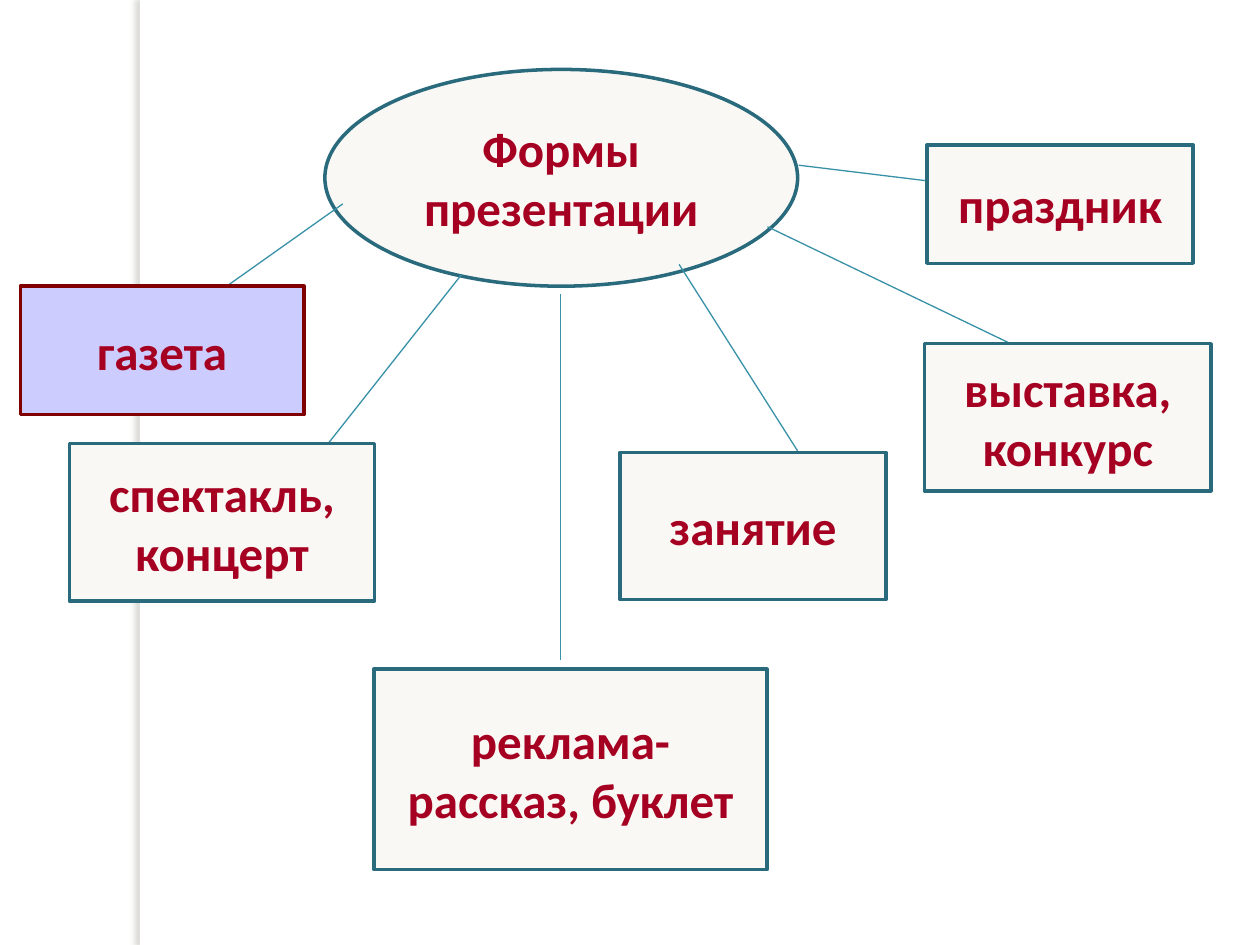
from lxml.etree import SubElement
from pptx import Presentation
from pptx.dml.color import RGBColor
from pptx.enum.shapes import MSO_CONNECTOR, MSO_SHAPE as Shape
from pptx.enum.text import MSO_ANCHOR, PP_ALIGN
from pptx.oxml.ns import qn
from pptx.util import Cm, Pt

COLORS = {
    "band": "FFFFFF", "shadow": "736F63", "cream": "FAF8F4", "teal": "296B7C",
    "ray": "3891A7", "lilac": "CCCCFF", "maroon": "800000", "text": "A50021",
}
FONT = {"name": "Calibri", "size": Pt(28), "bold": True}


def rgb(key):
    return RGBColor.from_string(COLORS[key])


def add_node(kind, words, place, fill="cream", border="teal"):
    node = slide.shapes.add_shape(kind, *map(Cm, place))
    node.shadow.inherit = False
    node.fill.solid()
    node.fill.fore_color.rgb = rgb(fill)
    node.line.color.rgb = rgb(border)
    node.line.width = Pt(2)
    frame = node.text_frame
    frame.word_wrap = True
    frame.vertical_anchor = MSO_ANCHOR.MIDDLE
    paragraph = frame.paragraphs[0]
    paragraph.alignment = PP_ALIGN.CENTER
    run = paragraph.add_run()
    run.text = words
    for attribute, value in FONT.items():
        setattr(run.font, attribute, value)
    run.font.color.rgb = rgb("text")


deck = Presentation()
deck.slide_width, deck.slide_height = Cm(25.4), Cm(19.05)
slide = deck.slides.add_slide(deck.slide_layouts[6])

# Vertical band with a soft shadow to the left
band = slide.shapes.add_shape(Shape.RECTANGLE, Cm(2.82), 0, Cm(0.2), deck.slide_height)
band.shadow.inherit = False
band.fill.solid()
band.fill.fore_color.rgb = rgb("band")
band.line.fill.background()
effects = band._element.spPr.find(qn("a:effectLst"))
shadow = SubElement(effects, qn("a:outerShdw"), blurRad=str(Pt(3)), dist=str(Pt(3)),
                    dir="10800000", algn="tl", rotWithShape="0")
shade = SubElement(shadow, qn("a:srgbClr"), val=COLORS["shadow"])
SubElement(shade, qn("a:alpha"), val="25000")

# Central topic
add_node(Shape.OVAL, "Формы презентации", (6.55, 1.4, 9.53, 4.37))

# Rays from the topic to the forms
rays = [
    (6.91, 4.11, 4.57, 5.77),
    (9.3, 5.54, 6.15, 9.53),
    (11.3, 5.92, 11.3, 13.31),
    (13.69, 5.33, 16.08, 9.09),
    (15.47, 4.57, 21.23, 7.34),
    (16.1, 3.33, 19.63, 3.76),
]
for ends in rays:
    ray = slide.shapes.add_connector(MSO_CONNECTOR.STRAIGHT, *map(Cm, ends))
    ray.line.color.rgb = rgb("ray")
    ray.line.width = Pt(0.75)
    SubElement(ray._element.spPr, qn("a:effectLst"))

# Forms of presentation
add_node(Shape.RECTANGLE, "газета", (0.41, 5.77, 5.72, 2.59), "lilac", "maroon")
forms = {
    "спектакль, концерт": (1.4, 8.94, 6.15, 3.18),
    "реклама-рассказ, буклет": (7.54, 13.49, 7.92, 4.04),
    "занятие": (12.5, 9.12, 5.36, 2.97),
    "выставка, конкурс": (18.64, 6.93, 5.77, 2.97),
    "праздник": (18.69, 2.92, 5.36, 2.39),
}
for words, place in forms.items():
    add_node(Shape.RECTANGLE, words, place)

deck.save("out.pptx")
